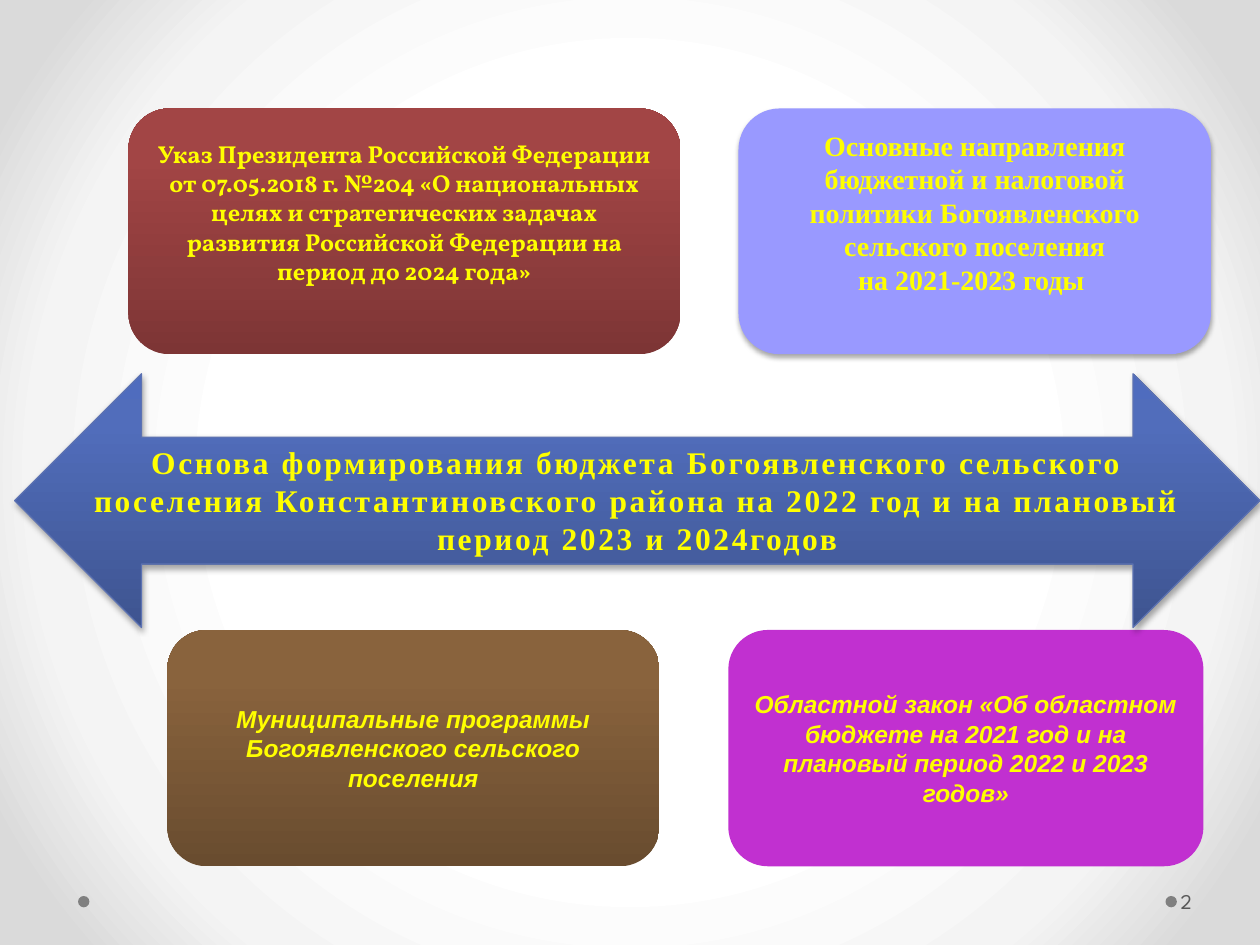
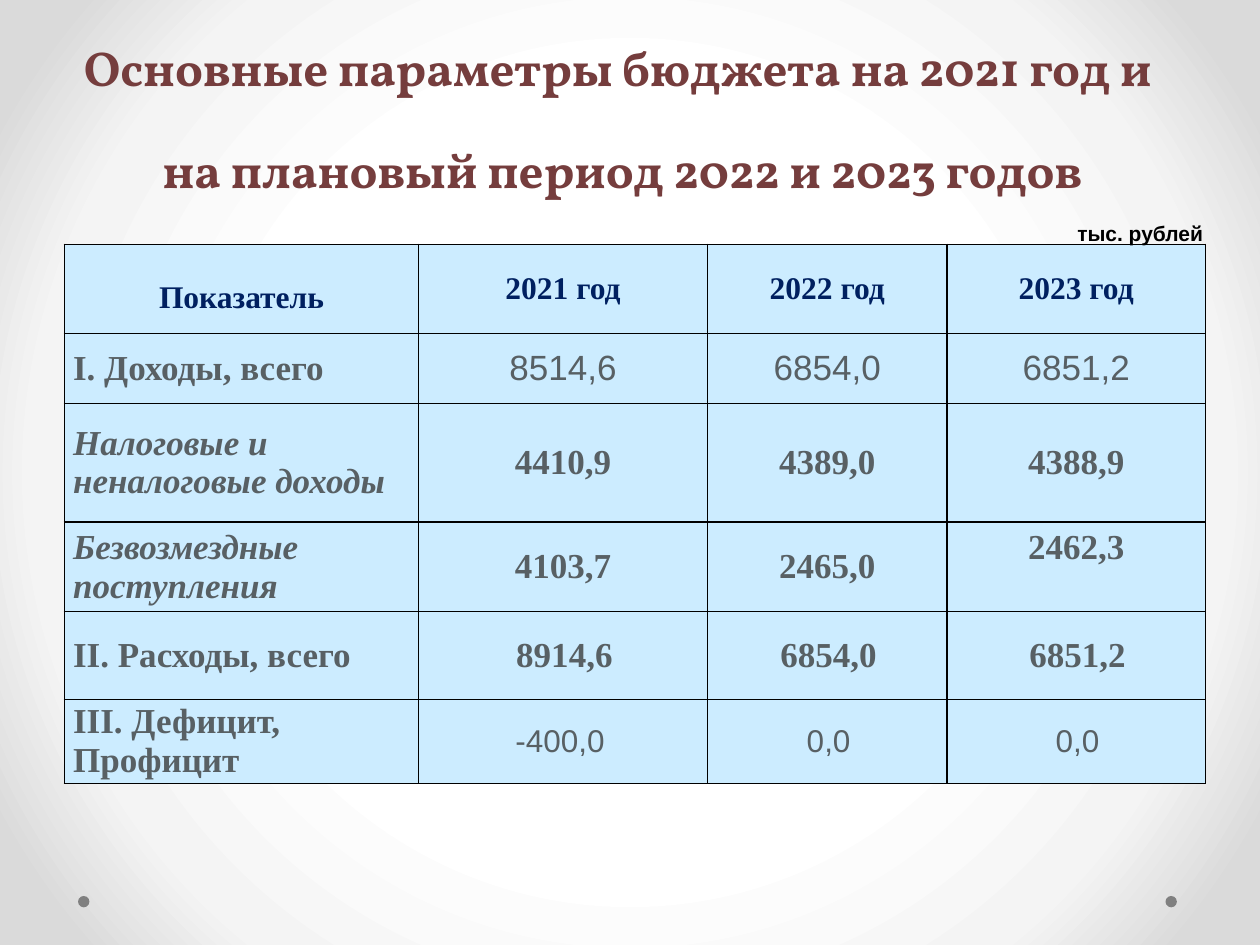
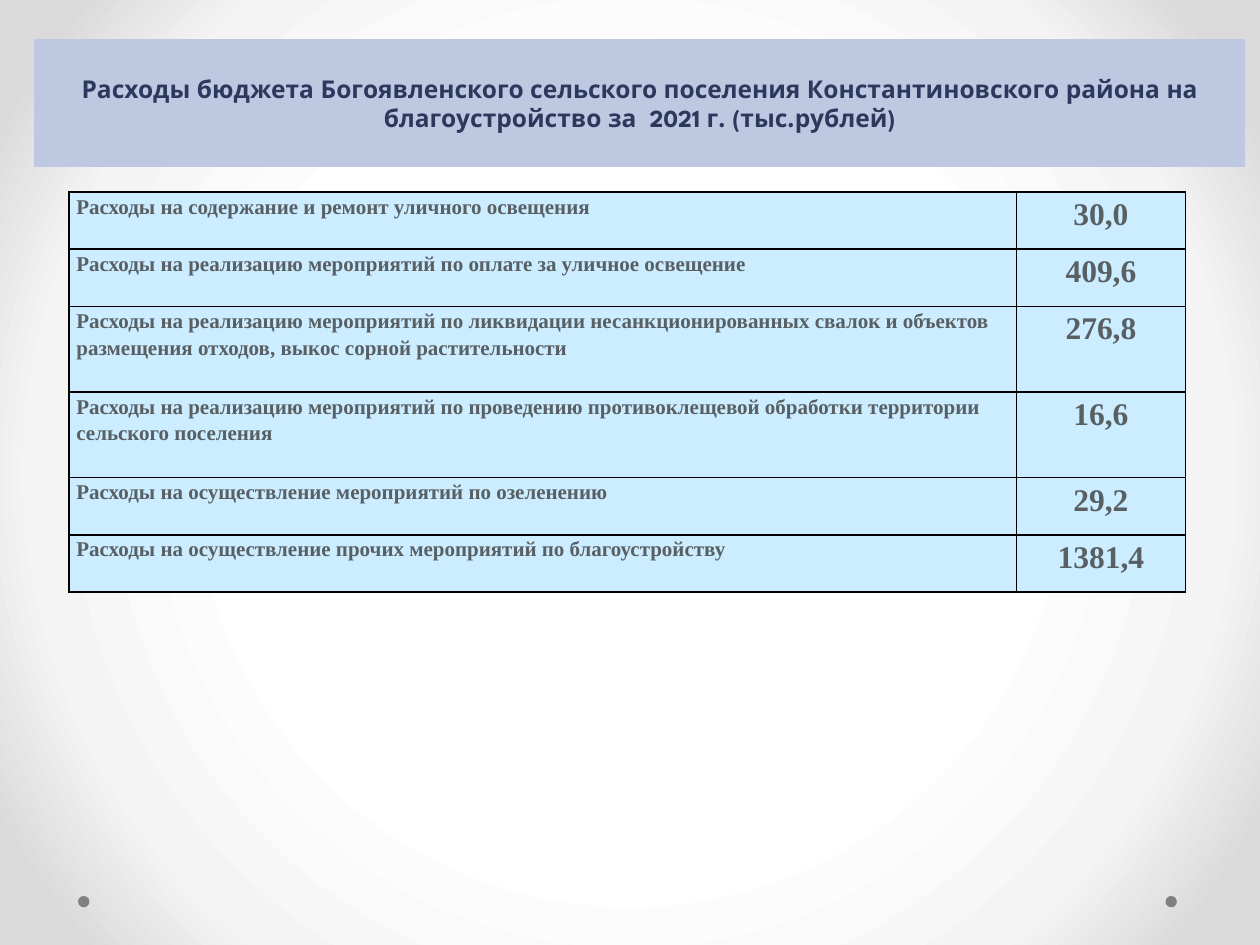
"""Build three slides on the budget of a rural settlement."""
from dataclasses import dataclass, replace

from pptx import Presentation
from pptx.dml.color import RGBColor
from pptx.enum.shapes import MSO_SHAPE
from pptx.enum.text import MSO_ANCHOR, PP_ALIGN
from pptx.oxml import parse_xml
from pptx.oxml.ns import nsdecls, qn
from pptx.util import Pt

RECT, ROUND = MSO_SHAPE.RECTANGLE, MSO_SHAPE.ROUNDED_RECTANGLE
ARROW, OVAL = MSO_SHAPE.LEFT_RIGHT_ARROW, MSO_SHAPE.OVAL
LEFT, MID, RIGHT = PP_ALIGN.LEFT, PP_ALIGN.CENTER, PP_ALIGN.RIGHT
TOP, CENTER, BASE = MSO_ANCHOR.TOP, MSO_ANCHOR.MIDDLE, MSO_ANCHOR.BOTTOM
PAD = (7.2, 3.6, 7.2, 3.6)
RAISED = (7.2, 3.6, 7.2, 25.6)


@dataclass(frozen=True)
class Face:
    font: str
    size: float
    color: str
    bold: bool = True
    slant: bool = False
    track: float = 0


@dataclass(frozen=True)
class Theme:
    back: tuple = ((50, "FFFFFF"), (76, "F4F4F4"), (92, "DADADA"))
    red: tuple = ((0, "7D3535"), (80, "A24545"), (100, "A44343"))
    brown: tuple = ((0, "694C2F"), (80, "89633D"), (100, "8B633C"))
    blue: tuple = ((0, "3E5490"), (80, "516DBB"), (100, "4F6CBE"))
    edge: str = "5C72B2"
    lilac: str = "9999FF"
    pink: str = "C130D0"
    band: str = "BFC8E1"
    dot: str = "808080"
    sky: str = "CCECFF"
    black: str = "000000"
    decree: Face = Face("Vollkorn", 14, "FFFF00")
    course: Face = Face("Times New Roman", 16, "FFFF00")
    law: Face = Face("Arial", 14, "FFFF00", slant=True)
    basis: Face = Face("Times New Roman", 18, "FFFF00", track=1.5)
    number: Face = Face("League Spartan", 12, "595959", bold=False)
    title: Face = Face("Vollkorn", 28, "753D3D")
    header: Face = Face("League Spartan", 14, "2C395E")
    unit: Face = Face("Arial", 12, "000000")
    head: Face = Face("Times New Roman", 18, "002060")
    body: Face = Face("Times New Roman", 20, "586064")
    plain: Face = Face("Arial", 20, "586064", bold=False)
    item: Face = Face("Times New Roman", 12, "586064")
    sum: Face = Face("Times New Roman", 18, "586064")


def blend(stops, way):
    marks = "".join(f'<a:gs pos="{pos * 1000}"><a:srgbClr val="{color}"/></a:gs>'
                    for pos, color in stops)
    return parse_xml(f'<a:gradFill {nsdecls("a")} rotWithShape="1">'
                     f'<a:gsLst>{marks}</a:gsLst>{way}</a:gradFill>')


class Deck:
    def __init__(self, theme):
        self.theme = theme
        self.show = Presentation()
        self.show.slide_width, self.show.slide_height = Pt(720), Pt(540)
        self.blank = self.show.slide_layouts[6]
        self.blank.background.fill.solid()
        solid = self.blank.element.find(".//" + qn("p:bgPr"))[0]
        way = ('<a:path path="circle"><a:fillToRect l="50000" t="50000" '
               'r="50000" b="50000"/></a:path>')
        solid.getparent().replace(solid, blend(theme.back, way))

    def page(self):
        self.slide = self.show.slides.add_slide(self.blank)
        for hold in list(self.slide.placeholders):
            hold.element.getparent().remove(hold.element)
        for left in (666, 44.6):
            self.shape(OVAL, (left, 512, 6.5, 6.5), self.theme.dot)

    def put(self, frame, lines, face, align=MID, space=None, indent=0):
        for row, line in enumerate(lines):
            para = frame.add_paragraph() if row else frame.paragraphs[0]
            para.alignment = align
            if space:
                para.line_spacing = space
            if indent:
                props = para._p.get_or_add_pPr()
                props.set("marL", "0")
                props.set("indent", str(Pt(indent)))
            for part, text in enumerate(line.split("\n")):
                if part:
                    para.add_line_break()
                run = para.add_run()
                run.text = text
                font = run.font
                font.name, font.size = face.font, Pt(face.size)
                font.bold, font.italic = face.bold, face.slant
                font.color.rgb = RGBColor.from_string(face.color)
                if face.track:
                    run._r.get_or_add_rPr().set("spc", str(int(face.track * 100)))

    def fit(self, frame, pad, anchor):
        frame.word_wrap = True
        frame.vertical_anchor = anchor
        (frame.margin_left, frame.margin_top,
         frame.margin_right, frame.margin_bottom) = map(Pt, pad)

    def shape(self, kind, box, fill, lines=(), face=None, pad=PAD,
              anchor=CENTER, edge=None, shade=False):
        item = self.slide.shapes.add_shape(kind, *map(Pt, box))
        item.shadow.inherit = False
        item.fill.solid()
        if isinstance(fill, str):
            item.fill.fore_color.rgb = RGBColor.from_string(fill)
        else:
            solid = item.element.spPr.find(qn("a:solidFill"))
            way = '<a:lin ang="16200000" scaled="0"/>'
            item.element.spPr.replace(solid, blend(fill, way))
        if edge:
            item.line.color.rgb = RGBColor.from_string(edge)
            item.line.width = Pt(0.75)
        else:
            item.line.fill.background()
        if shade:
            item.element.spPr.find(qn("a:effectLst")).append(parse_xml(
                f'<a:outerShdw {nsdecls("a")} blurRad="{Pt(3.1)}" '
                f'dist="{Pt(1.8)}" dir="5400000" rotWithShape="0">'
                f'<a:srgbClr val="{self.theme.black}"><a:alpha val="35000"/>'
                '</a:srgbClr></a:outerShdw>'))
        self.fit(item.text_frame, pad, anchor)
        self.put(item.text_frame, lines, face)

    def text(self, box, lines, face, align=MID, pad=PAD, anchor=TOP, space=None):
        frame = self.slide.shapes.add_textbox(*map(Pt, box)).text_frame
        self.fit(frame, pad, anchor)
        self.put(frame, lines, face, align, space)

    def table(self, box, cols, rows):
        grid = self.slide.shapes.add_table(len(rows), len(cols), *map(Pt, box)).table
        grid.first_row = grid.horz_banding = False
        for col, width in zip(grid.columns, cols):
            col.width = Pt(width)
        for row, high in zip(grid.rows, rows):
            row.height = Pt(high)
        return grid

    def cell(self, cell, lines, face, align=MID, side=5, drop=0, anchor=CENTER,
             space=None, indent=0):
        cell.fill.solid()
        cell.fill.fore_color.rgb = RGBColor.from_string(self.theme.sky)
        props = cell._tc.get_or_add_tcPr()
        for spot, edge in enumerate("LRTB"):
            props.insert(spot, parse_xml(
                f'<a:ln{edge} {nsdecls("a")} w="{Pt(1)}"><a:solidFill>'
                f'<a:srgbClr val="{self.theme.black}"/></a:solidFill></a:ln{edge}>'))
        cell.margin_left = cell.margin_right = Pt(side)
        cell.margin_top, cell.margin_bottom = Pt(0), Pt(drop)
        cell.vertical_anchor = anchor
        self.put(cell.text_frame, lines, face, align, space, indent)


def basis(deck):
    look = deck.theme
    deck.page()
    deck.shape(ROUND, (73.4, 62, 315.4, 140.4), look.red, [
        "Указ Президента Российской Федерации от 07.05.2018 г. №204 «О национальных "
        "целях и стратегических задачах развития Российской Федерации на период "
        "до 2024 года»"], look.decree, RAISED)
    deck.shape(ROUND, (422, 62, 270, 140.4), look.lilac, [
        "Основные направления бюджетной и налоговой политики Богоявленского "
        "сельского поселения", "на 2021-2023 годы "], look.course, RAISED, shade=True)
    deck.shape(ROUND, (95.6, 360, 281.2, 135), look.brown, [
        "Муниципальные программы Богоявленского сельского поселения"], look.law)
    deck.shape(ROUND, (416.2, 360, 271.5, 135), look.pink, [
        "Областной закон «Об областном бюджете на 2021 год и на плановый период "
        "2022 и 2023 годов»"], look.law)
    deck.shape(ARROW, (8.4, 213.6, 711.6, 145), look.blue, [
        "Основа формирования бюджета Богоявленского сельского поселения "
        "Константиновского района на 2022 год и на плановый период 2023 и 2024годов"],
        look.basis, anchor=TOP, edge=look.edge, shade=True)
    deck.text((672.5, 500.4, 44, 28.8), ["2"], look.number, LEFT,
              (2.2, 3.6, 3.6, 3.6), CENTER)


def budget(deck):
    look = deck.theme
    slant = replace(look.body, slant=True)
    small = replace(look.plain, size=18)
    rows = [
        (["I. Доходы, всего"], look.body, ("8514,6", "6854,0", "6851,2"), look.plain, -5),
        (["Налоговые и неналоговые доходы"], slant,
         ("4410,9", "4389,0", "4388,9"), look.body, -5),
        (["Безвозмездные поступления"], slant,
         ("4103,7", "2465,0", "2462,3"), look.body, -5),
        (["II. Расходы, всего"], look.body, ("8914,6", "6854,0", "6851,2"), look.body, 1.5),
        (["III. Дефицит,", "Профицит"], look.body, ("-400,0 ", "0,0", "0,0"), small, 1.5),
    ]
    deck.page()
    deck.text((0, 28, 711.4, 88.6), [
        "Основные параметры бюджета на 2021 год и \nна плановый период 2022 и 2023 годов"],
        look.title, anchor=BASE, space=Pt(58))
    grid = deck.table((36.8, 139.7, 652, 306.7), (202.5, 165, 137, 147.5),
                      (51, 39.8, 67.8, 51.2, 50.2, 46.7))
    deck.cell(grid.cell(0, 0), ["Показатель"], look.head, space=1.5, indent=-5)
    for col, year in enumerate((2021, 2022, 2023), 1):
        deck.cell(grid.cell(0, col), [f"{year} год"], look.head)
    for row, (name, face, sums, style, indent) in enumerate(rows, 1):
        deck.cell(grid.cell(row, 0), name, face, LEFT)
        for col, value in enumerate(sums, 1):
            drop = 22 if value == "2462,3" else 0
            deck.cell(grid.cell(row, col), [value], style, drop=drop, indent=indent)
    deck.text((592.6, 122.4, 102, 21.6), ["тыс. рублей"], look.unit, RIGHT)


def costs(deck):
    look = deck.theme
    rows = [
        ("содержание и ремонт уличного освещения", "30,0"),
        ("реализацию мероприятий по оплате за уличное освещение", "409,6"),
        ("реализацию мероприятий по ликвидации несанкционированных свалок и объектов "
         "размещения отходов, выкос сорной растительности", "276,8"),
        ("реализацию мероприятий по проведению противоклещевой обработки территории "
         "сельского поселения", "16,6"),
        ("осуществление мероприятий по озеленению", "29,2"),
        ("осуществление прочих мероприятий по благоустройству", "1381,4"),
    ]
    deck.page()
    deck.shape(RECT, (19.6, 22.4, 692, 73), look.band, [
        "Расходы бюджета Богоявленского сельского поселения Константиновского района "
        "на благоустройство за  2021 г. (тыс.рублей)"], look.header)
    grid = deck.table((39.4, 109.8, 638, 228.4), (541.5, 96.5),
                      (32.6, 32.6, 49, 49, 32.6, 32.6))
    for row, (name, value) in enumerate(rows):
        deck.cell(grid.cell(row, 0), [f"Расходы на {name}"], look.item, LEFT, 4.3,
                  anchor=TOP, space=1.15)
        deck.cell(grid.cell(row, 1), [value], look.sum, MID, 4.3,
                  anchor=TOP, space=1.15)


def main():
    deck = Deck(Theme())
    for build in (basis, budget, costs):
        build(deck)
    deck.show.save("out.pptx")


if __name__ == "__main__":
    main()
